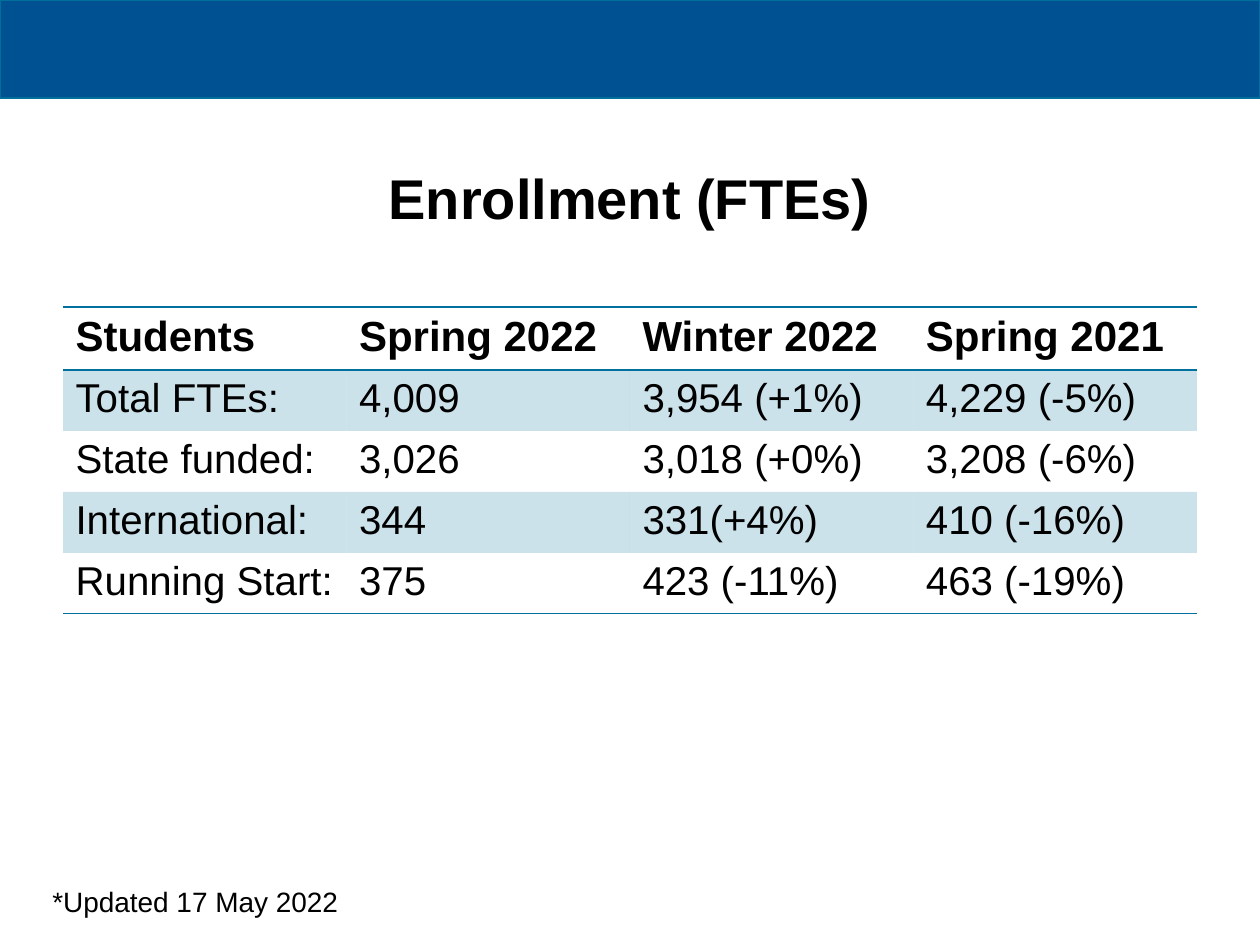
from dataclasses import dataclass

from lxml import etree
from pptx import Presentation
from pptx.dml.color import RGBColor
from pptx.enum.shapes import MSO_SHAPE
from pptx.enum.text import MSO_ANCHOR, PP_ALIGN
from pptx.oxml.ns import qn
from pptx.util import Pt

PX = 914400 // 126
RECT = MSO_SHAPE.RECTANGLE
TOP, MIDDLE = MSO_ANCHOR.TOP, MSO_ANCHOR.MIDDLE
LEFT, CENTER = PP_ALIGN.LEFT, PP_ALIGN.CENTER
NO_STYLE = "{2D5ABB26-0587-4C30-8999-92F81FD0307C}"


@dataclass(frozen=True)
class Theme:
    font: str = "Arial"
    text: str = "000000"
    banner: str = "005192"
    banner_line: str = "006F9B"
    accent: str = "00719F"
    band_alpha: int = 20
    title: int = 32
    header: int = 24
    body: int = 23
    note: int = 16
    rule: int = 1


THEME = Theme()
ROW_HEIGHT = 52
ENROLLMENT = [
    ("Students", "Spring 2022", "Winter 2022", "Spring 2021"),
    ("Total FTEs:", "4,009", "3,954 (+1%)", "4,229 (-5%)"),
    ("State funded:", "3,026", "3,018 (+0%)", "3,208 (-6%)"),
    ("International:", "344", "331(+4%)", "410 (-16%)"),
    ("Running Start: ", "375", "423 (-11%)", "463 (-19%)"),
]


def emu(*lengths):
    return [n * PX for n in lengths]


def rgb(color):
    return RGBColor.from_string(color)


def write(tf, text, size, bold=False, align=LEFT, anchor=TOP):
    tf.word_wrap = True
    tf.vertical_anchor = anchor
    p = tf.paragraphs[0]
    p.alignment = align
    r = p.add_run()
    r.text = text
    r.font.name = THEME.font
    r.font.size = Pt(size)
    r.font.bold = bold
    r.font.color.rgb = rgb(THEME.text)


def add_banner(s, box):
    sp = s.shapes.add_shape(RECT, *emu(*box))
    sp.shadow.inherit = False
    sp.fill.solid()
    sp.fill.fore_color.rgb = rgb(THEME.banner)
    sp.line.color.rgb = rgb(THEME.banner_line)
    sp.line.width = Pt(0.75)


def add_text(s, box, text, size, **fmt):
    sp = s.shapes.add_textbox(*emu(*box))
    write(sp.text_frame, text, size, **fmt)


def fill_cell(cell, banded):
    if not banded:
        cell.fill.background()
        return
    cell.fill.solid()
    cell.fill.fore_color.rgb = rgb(THEME.accent)
    color = next(cell._tc.tcPr.iter(qn("a:srgbClr")))
    etree.SubElement(color, qn("a:alpha"), val=str(THEME.band_alpha * 1000))


def rule_cell(cell, edges):
    """Draw rules on the given edges, named in schema order (T before B)."""
    for i, edge in enumerate(edges):
        ln = etree.Element(qn(f"a:ln{edge}"), w=str(Pt(THEME.rule)))
        fill = etree.SubElement(ln, qn("a:solidFill"))
        etree.SubElement(fill, qn("a:srgbClr"), val=THEME.accent)
        cell._tc.tcPr.insert(i, ln)


def add_enrollment_table(s, box, rows):
    frame = s.shapes.add_table(len(rows), len(rows[0]), *emu(*box))
    next(frame.element.iter(qn("a:tableStyleId"))).text = NO_STYLE
    table = frame.table
    table.horz_banding = False
    edges = {0: "TB", len(rows) - 1: "B"}
    for i, values in enumerate(rows):
        header = i == 0
        for j, value in enumerate(values):
            cell = table.cell(i, j)
            write(cell.text_frame, value, THEME.header if header else THEME.body, bold=header)
            fill_cell(cell, banded=i % 2 == 1)
            rule_cell(cell, edges.get(i, ""))


def build_enrollment_slide(prs):
    s = prs.slides.add_slide(prs.slide_layouts[6])
    add_banner(s, (0, 0, 1260, 98))
    add_text(s, (63, 124, 1134, 147), "Enrollment (FTEs)", THEME.title,
             bold=True, align=CENTER, anchor=MIDDLE)
    add_enrollment_table(s, (63, 307, 1134, ROW_HEIGHT * len(ENROLLMENT)), ENROLLMENT)
    add_text(s, (40, 878, 673, 47), "*Updated 17 May 2022", THEME.note)


def main():
    prs = Presentation()
    prs.slide_width, prs.slide_height = emu(1260, 945)
    build_enrollment_slide(prs)
    prs.save("out.pptx")


if __name__ == "__main__":
    main()
